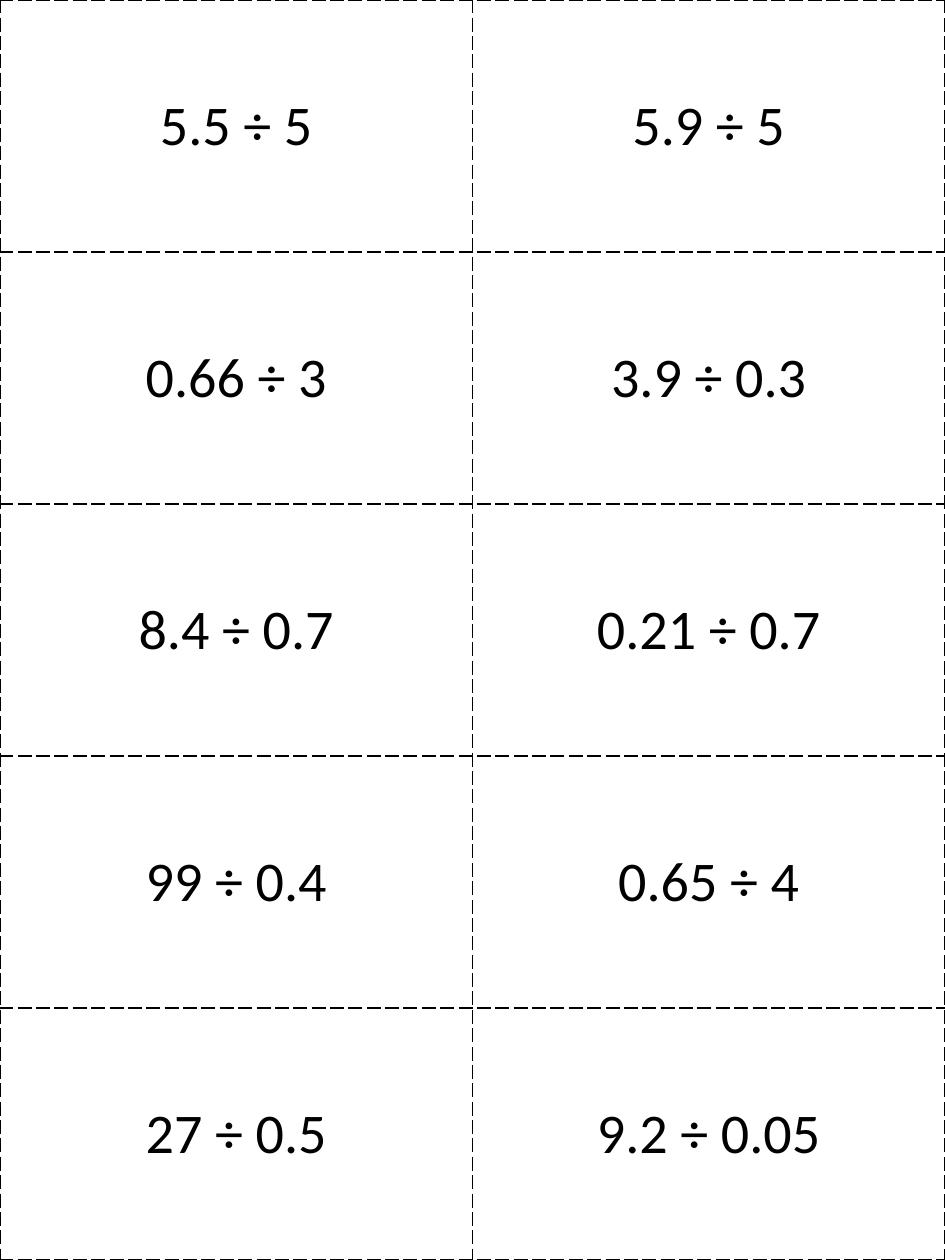
from dataclasses import dataclass

from lxml.etree import SubElement
from pptx import Presentation
from pptx.dml.color import RGBColor
from pptx.enum.text import MSO_ANCHOR as Anchor, PP_ALIGN as Align
from pptx.oxml.ns import qn
from pptx.slide import Slide
from pptx.table import _Cell as Cell
from pptx.util import Inches, Pt


@dataclass(frozen=True)
class Theme:
    font: str = "Calibri"
    text_size: int = 32
    ink: str = "000000"
    border_width: int = 1
    border_dash: str = "lgDash"


@dataclass(frozen=True)
class CardRow:
    left: str
    right: str


THEME = Theme()
PAGE_WIDTH = Inches(7.5)
PAGE_HEIGHT = Inches(10)
CARD_ROWS = [
    CardRow("5.5 ÷ 5", "5.9 ÷ 5"),
    CardRow("0.66 ÷ 3", "3.9 ÷ 0.3"),
    CardRow("8.4 ÷ 0.7", "0.21 ÷ 0.7"),
    CardRow("99 ÷ 0.4", "0.65 ÷ 4"),
    CardRow("27 ÷ 0.5", "9.2 ÷ 0.05"),
]


def add_cut_lines(cell: Cell) -> None:
    properties = cell._tc.get_or_add_tcPr()
    for side in ("lnL", "lnR", "lnT", "lnB"):
        line = SubElement(properties, qn(f"a:{side}"), w=str(Pt(THEME.border_width)))
        fill = SubElement(line, qn("a:solidFill"))
        SubElement(fill, qn("a:srgbClr"), val=THEME.ink)
        SubElement(line, qn("a:prstDash"), val=THEME.border_dash)


def fill_card(cell: Cell, problem: str) -> None:
    cell.vertical_anchor = Anchor.MIDDLE
    add_cut_lines(cell)
    cell.fill.background()
    paragraph = cell.text_frame.paragraphs[0]
    paragraph.text = problem
    paragraph.alignment = Align.CENTER
    font = paragraph.runs[0].font
    font.name = THEME.font
    font.size = Pt(THEME.text_size)
    font.color.rgb = RGBColor.from_string(THEME.ink)


def add_cards(slide: Slide, card_rows: list[CardRow]) -> None:
    table = slide.shapes.add_table(
        len(card_rows), 2, Inches(0), Inches(0), PAGE_WIDTH, PAGE_HEIGHT
    ).table
    table.first_row = False
    table.horz_banding = False
    for row_index, card_row in enumerate(card_rows):
        fill_card(table.cell(row_index, 0), card_row.left)
        fill_card(table.cell(row_index, 1), card_row.right)


def main() -> None:
    presentation = Presentation()
    presentation.slide_width = PAGE_WIDTH
    presentation.slide_height = PAGE_HEIGHT
    slide = presentation.slides.add_slide(presentation.slide_layouts[6])
    add_cards(slide, CARD_ROWS)
    presentation.save("out.pptx")


if __name__ == "__main__":
    main()
